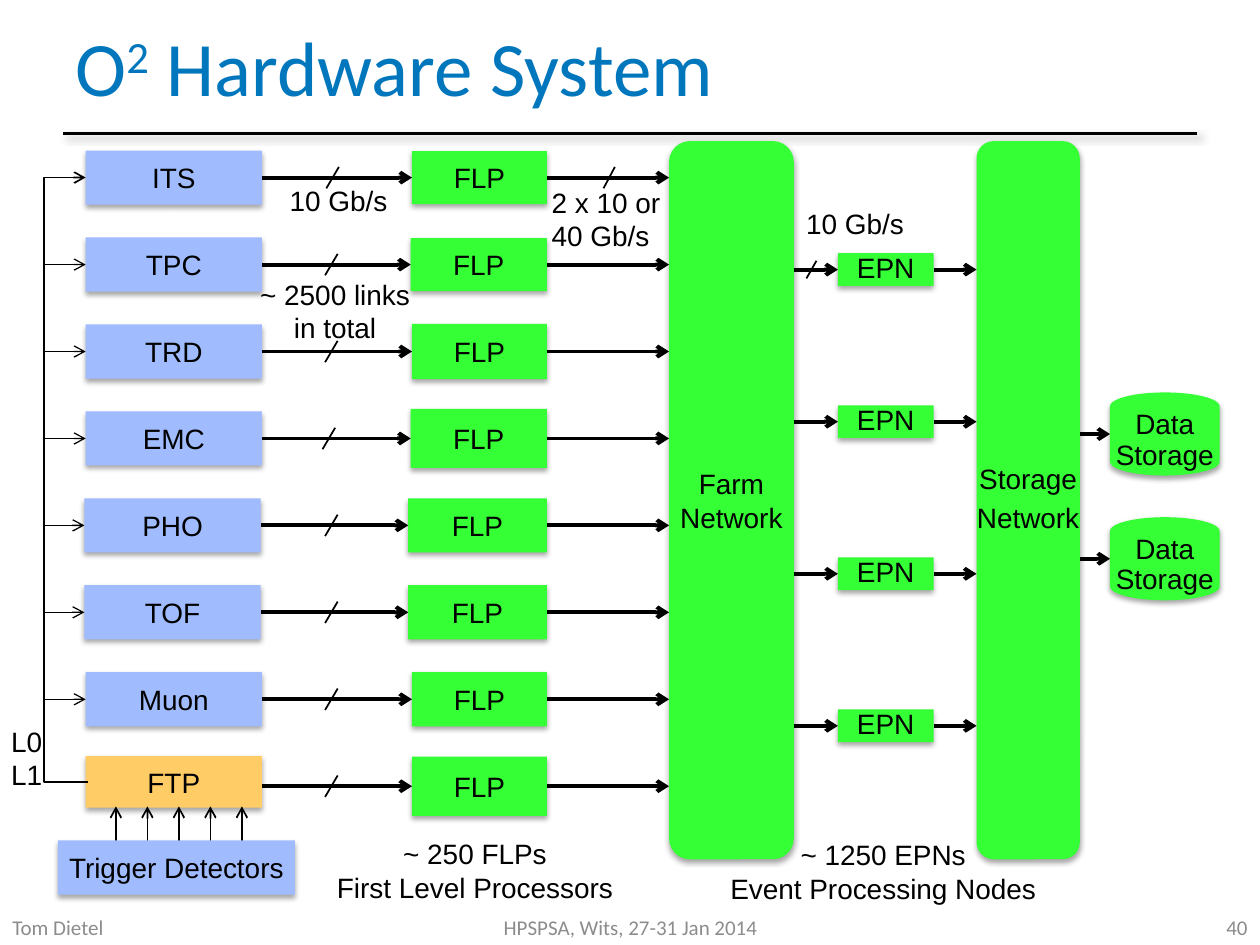
from dataclasses import dataclass
from typing import NamedTuple, Optional

import lxml.etree
import pptx
import pptx.dml.color
import pptx.enum.shapes
import pptx.enum.text
import pptx.oxml.ns
import pptx.util

SHAPE = pptx.enum.shapes.MSO_SHAPE
CONNECTOR = pptx.enum.shapes.MSO_CONNECTOR
ALIGN = pptx.enum.text.PP_ALIGN
ANCHOR = pptx.enum.text.MSO_ANCHOR
TOP, LEFT, BOTTOM, RIGHT = range(4)

BLACK, BLUE, GREEN, ORANGE = "000000", "A0BCFE", "35FF35", "FFCC66"
TITLE_BLUE, FOOTER_GRAY = "0076BC", "8C8C8C"

deck = pptx.Presentation()
deck.slide_width = pptx.util.Inches(10)
deck.slide_height = pptx.util.Inches(7.5)
COLUMN = deck.slide_width / 100
ROW = deck.slide_height / 75
slide = deck.slides.add_slide(deck.slide_layouts[6])


class Point(NamedTuple):
    x: float
    y: float


class Box(NamedTuple):
    left: float
    top: float
    width: float
    height: float

    def emu(self) -> tuple:
        return (round(self.left * COLUMN), round(self.top * ROW),
                round(self.width * COLUMN), round(self.height * ROW))


class Side(NamedTuple):
    block: object
    site: int


@dataclass
class Shadow:
    blur: float
    distance: float
    angle: int
    opacity: int


@dataclass
class TextStyle:
    size: float = 16
    font: str = "Arial"
    color: str = BLACK
    align: int = ALIGN.CENTER
    line_spacing: Optional[float] = None
    gap: float = 0


@dataclass
class Channel:
    detector: str
    detector_left: float = 6.8
    flp_left: float = 32.7
    flp_height: float = 4.3
    tick_right: float = 26.8


BLOCK_SHADOW = Shadow(3.1, 1.8, 90, 35)
RULE_SHADOW = Shadow(4, 3, 45, 40)
CENTERED = TextStyle()
LEFT_ALIGNED = TextStyle(align=ALIGN.LEFT)
TIGHT = TextStyle(line_spacing=0.9, gap=4.8)


def rgb(value: str) -> pptx.dml.color.RGBColor:
    return pptx.dml.color.RGBColor.from_string(value)


def add_xml(parent, tag: str, **attributes):
    child = lxml.etree.SubElement(parent, pptx.oxml.ns.qn(tag))
    for key, value in attributes.items():
        child.set(key, str(value))
    return child


def cast_shadow(effects, shadow: Shadow) -> None:
    outer = add_xml(effects, "a:outerShdw", blurRad=round(shadow.blur * 12700),
                    dist=round(shadow.distance * 12700), dir=shadow.angle * 60000,
                    rotWithShape=0)
    tint = add_xml(outer, "a:srgbClr", val=BLACK)
    add_xml(tint, "a:alpha", val=shadow.opacity * 1000)


def write(frame, text: str, style: TextStyle) -> None:
    frame.text = text
    for index, paragraph in enumerate(frame.paragraphs):
        paragraph.alignment = style.align
        if style.line_spacing:
            paragraph.line_spacing = style.line_spacing
        if index and style.gap:
            paragraph.space_before = pptx.util.Pt(style.gap)
        for run in paragraph.runs:
            run.font.size = pptx.util.Pt(style.size)
            run.font.name = style.font
            run.font.color.rgb = rgb(style.color)


def block(box: Box, text: str, fill: str, style: TextStyle = CENTERED,
          preset: int = SHAPE.RECTANGLE):
    shape = slide.shapes.add_shape(preset, *box.emu())
    shape.fill.solid()
    shape.fill.fore_color.rgb = rgb(fill)
    shape.line.fill.background()
    shape.shadow.inherit = False
    cast_shadow(shape._element.spPr.find(pptx.oxml.ns.qn("a:effectLst")), BLOCK_SHADOW)
    frame = shape.text_frame
    frame.word_wrap = False
    frame.vertical_anchor = ANCHOR.MIDDLE
    frame.margin_left = frame.margin_right = pptx.util.Inches(0.05)
    write(frame, text, style)
    return shape


def label(box: Box, text: str, style: TextStyle = CENTERED):
    frame = slide.shapes.add_textbox(*box.emu()).text_frame
    frame.word_wrap = False
    frame.auto_size = pptx.enum.text.MSO_AUTO_SIZE.SHAPE_TO_FIT_TEXT
    write(frame, text, style)


def band(box: Box, text: str, style: TextStyle):
    frame = slide.shapes.add_textbox(*box.emu()).text_frame
    frame.word_wrap = True
    frame.vertical_anchor = ANCHOR.MIDDLE
    write(frame, text, style)
    return frame


def line(start: Point | Side, end: Point | Side, width: float, arrow: bool = False,
         kind: int = CONNECTOR.STRAIGHT, shadow: Optional[Shadow] = None):
    points = [end_point if isinstance(end_point, Point) else Point(0, 0)
              for end_point in (start, end)]
    link = slide.shapes.add_connector(
        kind, *(round(value * unit) for point in points
                for value, unit in zip(point, (COLUMN, ROW))))
    if isinstance(start, Side):
        link.begin_connect(start.block, start.site)
    if isinstance(end, Side):
        link.end_connect(end.block, end.site)
    link.line.width = pptx.util.Pt(width)
    link.line.color.rgb = rgb(BLACK)
    if arrow:
        add_xml(link.line._get_or_add_ln(), "a:tailEnd", type="arrow")
    effects = add_xml(link._element.spPr, "a:effectLst")
    if shadow:
        cast_shadow(effects, shadow)
    return link


def tick(right: float, center: float, width: float = 1, height: float = 1.7) -> None:
    top = center - height / 2
    line(Point(right, top), Point(right - width, top + height), 1)


line(Point(5, 10.6), Point(95, 10.6), 1.5, shadow=RULE_SHADOW)
title = band(Box(5, 0, 90, 10.5), "O", TextStyle(44, "Calibri", TITLE_BLUE, ALIGN.LEFT))
for words, baseline in (("2", 30000), (" Hardware System", 0)):
    run = title.paragraphs[0].add_run()
    run.text = words
    run.font.size = pptx.util.Pt(44)
    run.font.name = "Calibri"
    run.font.color.rgb = rgb(TITLE_BLUE)
    run._r.get_or_add_rPr().set("baseline", str(baseline))

FARM_LEFT, FARM_RIGHT, STORAGE_LEFT, STORAGE_RIGHT, TRUNK = 53.1, 63, 77.5, 85.7, 3.5
block(Box(FARM_LEFT, 11.2, 9.9, 57), "Farm\nNetwork", GREEN, CENTERED, SHAPE.ROUNDED_RECTANGLE)
block(Box(STORAGE_LEFT, 11.2, 8.2, 57), "Storage\nNetwork", GREEN, TIGHT, SHAPE.ROUNDED_RECTANGLE)
trigger_processor = Box(6.8, 60, 14, 4.1)

channels = [
    Channel("ITS", flp_height=4.2, tick_right=26.9),
    Channel("TPC", flp_left=32.6, flp_height=4.2),
    Channel("TRD", flp_height=4.4),
    Channel("EMC", flp_left=32.6, flp_height=4.7, tick_right=26.6),
    Channel("PHO", 6.7, 32.4),
    Channel("TOF", 6.7, 32.4),
    Channel("Muon"),
    Channel("FTP", flp_height=4.7),
]
for index, channel in enumerate(channels):
    center = 14.1 + 6.9 * index
    flp = block(Box(channel.flp_left, center - channel.flp_height / 2,
                    43.4 - channel.flp_left, channel.flp_height), "FLP", GREEN)
    if channel.detector == "FTP":
        block(trigger_processor, channel.detector, ORANGE)
        source = Point(20.8, center)
    else:
        detector = block(Box(channel.detector_left, center - 2.15, 14, 4.3), channel.detector, BLUE)
        source = Side(detector, RIGHT)
        if index:
            line(Point(TRUNK, center), Side(detector, LEFT), 0.75, arrow=True)
    line(source, Side(flp, LEFT), 2.25, arrow=True)
    line(Side(flp, RIGHT), Point(FARM_LEFT, center), 2.25, arrow=True)
    tick(channel.tick_right, center)
tick(48.8, 14.1, 0.9)

trunk = line(Point(7, 62.1), Point(6.8, 14.1), 1, arrow=True, kind=CONNECTOR.ELBOW)
bend = round((7 - TRUNK) / (7 - 6.8) * 100000)
add_xml(trunk._element.spPr.prstGeom.get_or_add_avLst(), "a:gd", name="adj1", fmla=f"val {bend}")

for index in range(5):
    x = 9.2 + 2.5 * index
    line(Point(x, 67), Point(x, 64), 1, arrow=True)
block(Box(4.6, 66.7, 18.8, 4.3), "Trigger Detectors", BLUE)

for index in range(4):
    center = 21.4 + 12.07 * index
    epn = block(Box(66.5, center - 1.3, 7.6, 2.6), "EPN", GREEN, TIGHT)
    line(Point(FARM_RIGHT, center), Side(epn, LEFT), 2.25, arrow=True)
    line(Side(epn, RIGHT), Point(STORAGE_LEFT, center), 2.25, arrow=True)
tick(64.8, 21.4, 0.8, 1.4)

for center in (34.45, 44.35):
    block(Box(88.1, center - 3.3, 8.7, 6.6), "Data\vStorage", GREEN, TIGHT,
          SHAPE.FLOWCHART_MAGNETIC_DISK)
    line(Point(STORAGE_RIGHT, center), Point(88.1, center), 2.25, arrow=True)

label(Box(22, 14.1, 9.9, 3.7), "10 Gb/s", LEFT_ALIGNED)
label(Box(42.8, 14.2, 11.4, 6.4), "2 x 10 or \v40 Gb/s", LEFT_ALIGNED)
label(Box(63, 15.9, 9.9, 3.7), "10 Gb/s", LEFT_ALIGNED)
label(Box(-0.1, 57, 4.5, 6.4), "L0\vL1", LEFT_ALIGNED)
label(Box(19.6, 21.5, 14, 6.4), "~ 2500 links\vin total")
label(Box(25.6, 65.9, 24.2, 6.4), "~ 250 FLPs\nFirst Level Processors")
label(Box(56.8, 66, 26.6, 6.4), "~ 1250 EPNs\nEvent Processing Nodes")

for left, width, words, align in (
        (0, 17, "Tom Dietel", ALIGN.LEFT),
        (18.2, 63.7, "HPSPSA, Wits, 27-31 Jan 2014", ALIGN.CENTER),
        (85.5, 14.5, "40", ALIGN.RIGHT)):
    band(Box(left, 72.2, width, 2.7), words, TextStyle(12, "Calibri", FOOTER_GRAY, align))

deck.save("out.pptx")
